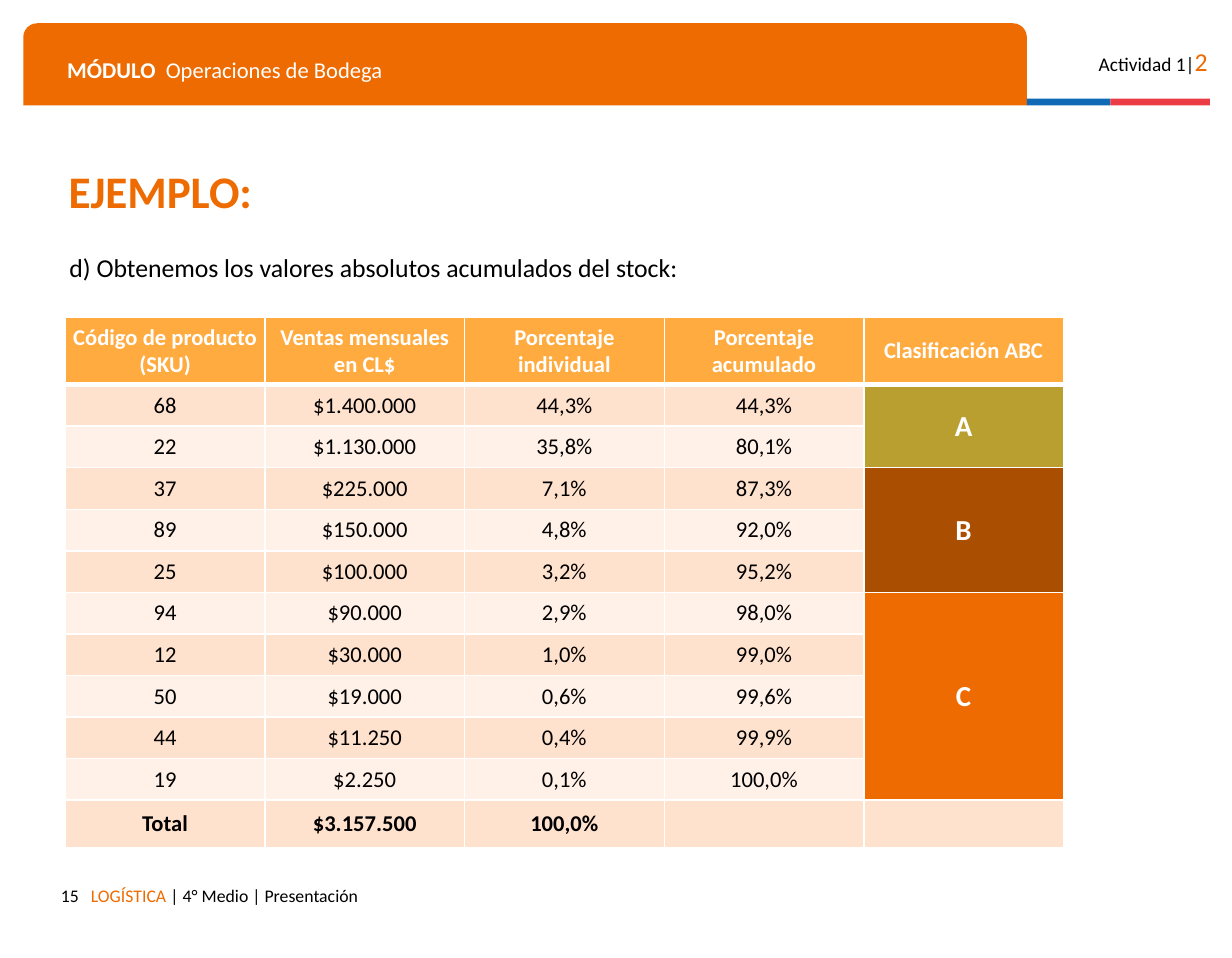
from dataclasses import dataclass

from lxml.etree import SubElement
from pptx import Presentation
from pptx.dml.color import RGBColor
from pptx.enum.shapes import MSO_SHAPE as Preset
from pptx.enum.text import MSO_ANCHOR as Anchor, MSO_AUTO_SIZE as AutoSize, PP_ALIGN as Align
from pptx.oxml.ns import qn
from pptx.util import Cm, Pt


@dataclass(frozen=True)
class Theme:
    """Colours and type sizes of the deck."""
    font: str = "Calibri"
    orange: str = "ED6B00"
    blue: str = "0F69B4"
    red: str = "EB3C46"
    white: str = "FFFFFF"
    black: str = "000000"
    header: str = "FFAB40"
    bands: tuple = ("FFF1E8", "FFE2CD")
    olive: str = "B99F2F"
    brown: str = "AA4E02"
    title: int = 28
    grade: int = 18
    body: int = 16
    table: int = 14
    activity: int = 12
    footer: int = 11


@dataclass(frozen=True)
class Box:
    """A rectangle in centimetres."""
    left: float
    top: float
    width: float
    height: float

    def inner(self, left, top, width, height):
        """Return a box placed relative to this one."""
        return Box(self.left + left, self.top + top, width, height)

    def lengths(self):
        """Return the four sides as slide lengths."""
        return [Cm(side) for side in (self.left, self.top, self.width, self.height)]


THEME = Theme()
HEADINGS = ["Código de producto (SKU)", "Ventas mensuales en CL$", "Porcentaje individual",
            "Porcentaje acumulado", "Clasificación ABC"]
PRODUCTS = [
    ("68", "$1.400.000", "44,3%", "44,3%"),
    ("22", "$1.130.000", "35,8%", "80,1%"),
    ("37", "$225.000", "7,1%", "87,3%"),
    ("89", "$150.000", "4,8%", "92,0%"),
    ("25", "$100.000", "3,2%", "95,2%"),
    ("94", "$90.000", "2,9%", "98,0%"),
    ("12", "$30.000", "1,0%", "99,0%"),
    ("50", "$19.000", "0,6%", "99,6%"),
    ("44", "$11.250", "0,4%", "99,9%"),
    ("19", "$2.250", "0,1%", "100,0%"),
]
TOTALS = ("Total", "$3.157.500", "100,0%")
GRADES = [("A", 2, THEME.olive), ("B", 3, THEME.brown), ("C", 5, THEME.orange)]


def style(span, size, colour, bold=False):
    """Give a run its font, size, colour and weight."""
    span.font.name = THEME.font
    span.font.size = Pt(size)
    span.font.bold = bold
    span.font.color.rgb = RGBColor.from_string(colour)


def fill_frame(frame, spans, align=Align.LEFT, anchor=Anchor.TOP):
    """Write styled spans in the first paragraph of a text frame."""
    frame.word_wrap = True
    frame.auto_size = AutoSize.NONE
    frame.vertical_anchor = anchor
    frame.margin_left = frame.margin_right = Cm(0.25)
    frame.margin_top = frame.margin_bottom = Cm(0.25)
    para = frame.paragraphs[0]
    para.alignment = align
    para.space_before = Pt(0)
    for text, *look in spans:
        span = para.add_run()
        span.text = text
        style(span, *look)
    return para


def add_text(page, box, spans, align=Align.LEFT):
    """Add a text box and return its paragraph."""
    return fill_frame(page.shapes.add_textbox(*box.lengths()).text_frame, spans, align)


def add_block(page, preset, box, colour):
    """Add a flat shape without outline."""
    block = page.shapes.add_shape(preset, *box.lengths())
    block.shadow.inherit = False
    block.fill.solid()
    block.fill.fore_color.rgb = RGBColor.from_string(colour)
    block.line.fill.background()
    return block


def place(holder, box):
    """Move a placeholder to a box."""
    holder.left, holder.top, holder.width, holder.height = box.lengths()
    return holder.text_frame


def draw_banner(page, box):
    """Draw the module banner, the activity label and the two-colour stripe."""
    banner = add_block(page, Preset.ROUND_2_SAME_RECTANGLE, box.inner(0, 0, 21.97, box.height),
                       THEME.orange)
    banner.adjustments[0] = 0.17
    stripe_top = box.height - 0.15
    add_block(page, Preset.RECTANGLE, box.inner(21.97, stripe_top, 1.83, 0.15), THEME.blue)
    add_block(page, Preset.RECTANGLE, box.inner(23.8, stripe_top, 2.18, 0.15), THEME.red)
    module = add_text(page, box.inner(0.71, 0.46, 20.68, 1.04), [
        ("MÓDULO", THEME.table, THEME.white, True),
        ("\tOperaciones de Bodega", THEME.table, THEME.white)])
    stops = SubElement(module._p.get_or_add_pPr(), qn("a:tabLst"))
    SubElement(stops, qn("a:tab"), pos=str(Cm(2.16)), algn="l")
    add_text(page, box.inner(22.93, 0.25, 3.25, 1.09), [
        ("Actividad 1|", THEME.activity, THEME.black),
        ("2", THEME.body, THEME.orange)], Align.RIGHT)


def draw_heading(page, box):
    """Fill the title and the introductory sentence."""
    title = place(page.shapes.title, box.inner(0, 0, 10.24, 1.5))
    para = fill_frame(title, [("EJEMPLO:", THEME.title, THEME.orange, True)], anchor=Anchor.MIDDLE)
    para.line_spacing = 0.8
    body = place(page.placeholders[1], box.inner(0.02, 1.73, 21.95, 1.09))
    para = fill_frame(body, [("d) Obtenemos los valores absolutos acumulados del stock:",
                              THEME.body, THEME.black)])
    properties = para._p.get_or_add_pPr()
    properties.set("marL", "0")
    properties.set("indent", "0")
    SubElement(properties, qn("a:buNone"))


def paint_cell(cell, colour, top=1, bottom=1):
    """Give a cell white borders and a plain fill."""
    properties = cell._tc.get_or_add_tcPr()
    for side, width in (("L", 1), ("R", 1), ("T", top), ("B", bottom)):
        edge = SubElement(properties, qn(f"a:ln{side}"), w=str(Pt(width)))
        SubElement(SubElement(edge, qn("a:solidFill")), qn("a:srgbClr"), val=THEME.white)
    cell.fill.solid()
    cell.fill.fore_color.rgb = RGBColor.from_string(colour)
    cell.vertical_anchor = Anchor.MIDDLE
    cell.margin_left = cell.margin_right = Cm(0.13)
    cell.margin_top = cell.margin_bottom = Cm(0.13)


def write_cell(cell, text, size, colour, bold):
    """Write centred text in a cell."""
    cell.text_frame.text = text
    para = cell.text_frame.paragraphs[0]
    para.alignment = Align.CENTER
    for span in para.runs:
        style(span, size, colour, bold)


def draw_stock_table(page, box):
    """Draw the ABC stock table with its merged grade cells."""
    rows = [HEADINGS, *PRODUCTS, TOTALS]
    last = len(rows) - 1
    table = page.shapes.add_table(len(rows), len(HEADINGS), *box.lengths()).table
    table.first_row = table.horz_banding = False
    for column in table.columns:
        column.width = Cm(box.width / len(HEADINGS))
    heights = {0: 1.46, last: 1.04}
    for index, row in enumerate(table.rows):
        row.height = Cm(heights.get(index, 0.91))
        for cell in row.cells:
            paint_cell(cell, THEME.bands[index % 2] if index else THEME.header,
                       top=3 if index == 1 else 1, bottom=1 if index else 3)
        for cell, text in zip(row.cells, rows[index]):
            write_cell(cell, text, THEME.table, THEME.black if index else THEME.white,
                       index in (0, last))
    start, column = 1, len(HEADINGS) - 1
    for grade, count, colour in GRADES:
        cell = table.cell(start, column)
        cell.merge(table.cell(start + count - 1, column))
        cell.fill.fore_color.rgb = RGBColor.from_string(colour)
        write_cell(cell, grade, THEME.grade, THEME.white, True)
        start += count


def draw_footer(page, box):
    """Write the page number and the course line."""
    add_text(page, box.inner(0.7, 0, 18.15, box.height), [
        ("LOGÍSTICA ", THEME.footer, THEME.orange),
        ("| 4° Medio | Presentación", THEME.footer, THEME.black)])
    add_text(page, box.inner(0, 0, 0.94, box.height),
             [("15", THEME.footer, THEME.black)], Align.RIGHT)


def main():
    """Build the slide and save it."""
    deck = Presentation()
    deck.slide_width, deck.slide_height = Cm(26.97), Cm(20.98)
    page = deck.slides.add_slide(deck.slide_layouts[1])
    draw_banner(page, Box(0.51, 0.51, 25.98, 1.8))
    draw_heading(page, Box(1.25, 3.53, 21.97, 2.82))
    draw_stock_table(page, Box(1.43, 6.96, 21.85, 11.6))
    draw_footer(page, Box(1.04, 19.13, 18.85, 0.89))
    deck.save("out.pptx")


if __name__ == "__main__":
    main()
